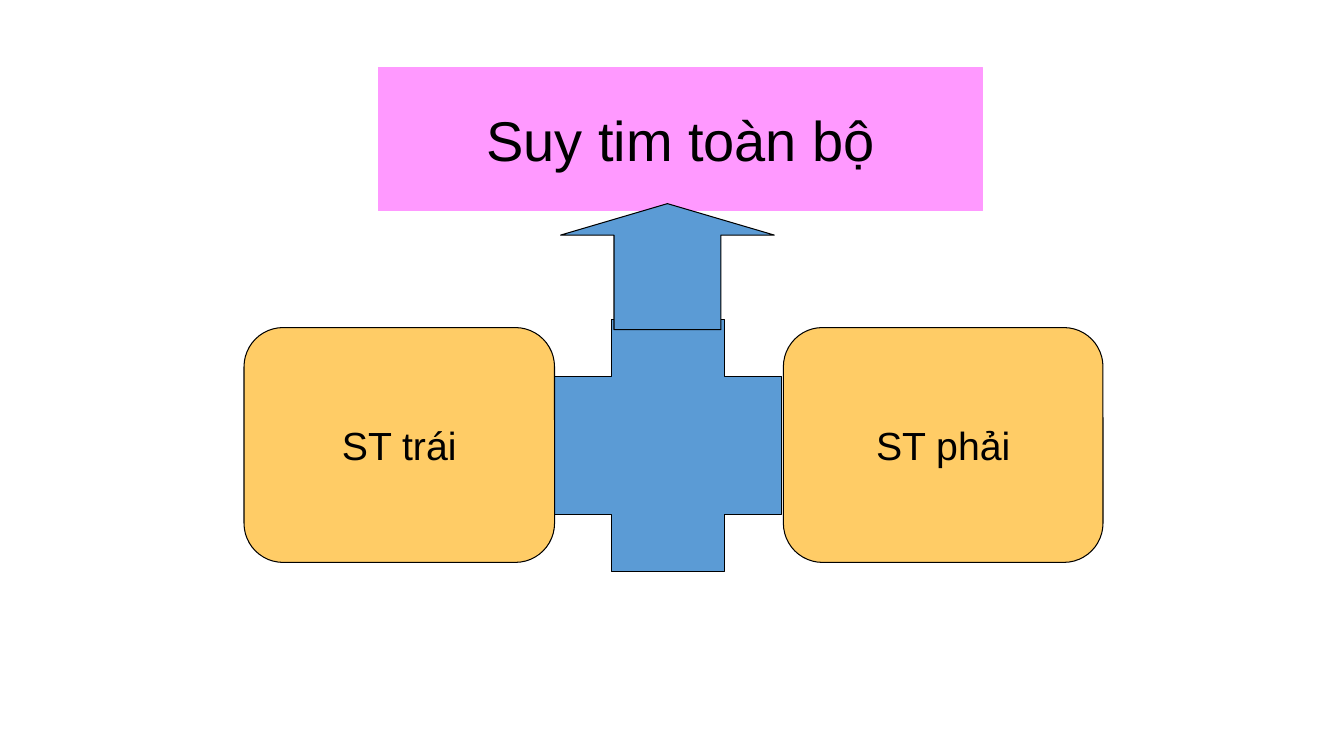
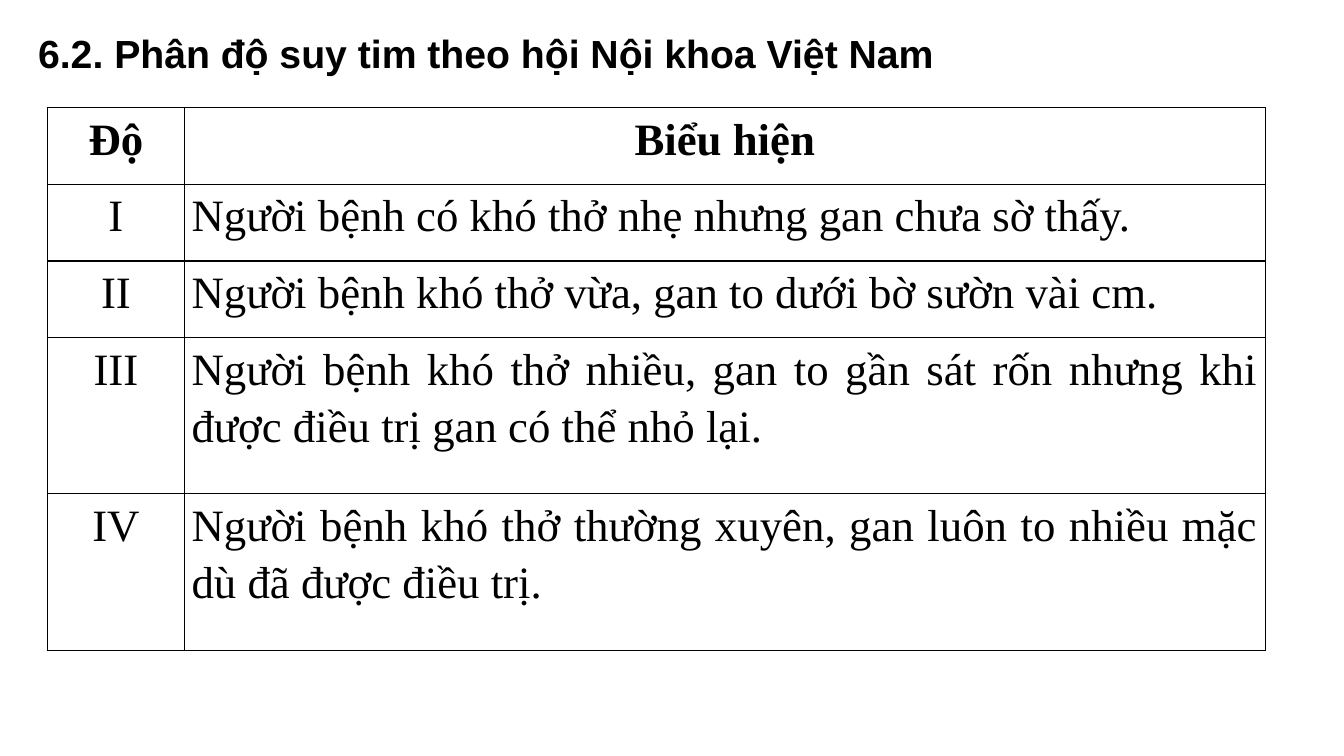
"""Build two slides on heart failure: a diagram and a table of grades."""
from lxml import etree
from pptx import Presentation
from pptx.dml.color import RGBColor
from pptx.enum.shapes import MSO_SHAPE
from pptx.enum.text import MSO_ANCHOR, PP_ALIGN
from pptx.oxml.ns import qn
from pptx.util import Inches, Pt

RECT, ROUND = MSO_SHAPE.RECTANGLE, MSO_SHAPE.ROUNDED_RECTANGLE
CROSS, ARROW = MSO_SHAPE.CROSS, MSO_SHAPE.UP_ARROW
CENTER, JUSTIFY = PP_ALIGN.CENTER, PP_ALIGN.JUSTIFY
MIDDLE = MSO_ANCHOR.MIDDLE
BLACK, WHITE, BLUE, GOLD, PINK = "000000", "FFFFFF", "5B9BD5", "FFCC66", "FF99FF"
SANS, SERIF = "Arial", "Times New Roman"


def color(code):
    """Turn a hex string into a colour."""
    return RGBColor.from_string(code)


def style(para, text, face, size, align, bold=False):
    """Write one paragraph with its font and alignment."""
    para.text = text
    para.alignment = align
    font = para.font
    font.name, font.size, font.bold = face, Pt(size), bold
    font.color.rgb = color(BLACK)


deck = Presentation()
deck.slide_width, deck.slide_height = Inches(13.33), Inches(7.5)
blank = deck.slide_layouts[6]

slide = deck.slides.add_slide(blank)
parts = [
    (CROSS, (5.5, 3.17, 2.25, 2.5), BLUE, BLACK, "", 28),
    (ROUND, (7.77, 3.25, 3.17, 2.33), GOLD, BLACK, "ST phải", 28),
    (ROUND, (2.42, 3.25, 3.08, 2.33), GOLD, BLACK, "ST trái", 28),
    (RECT, (3.75, 0.67, 6, 1.42), PINK, PINK, "Suy tim toàn bộ", 40),
    (ARROW, (5.56, 2.02, 2.12, 1.25), BLUE, BLACK, "", 28),
]
for kind, place, fill, line, text, size in parts:
    shape = slide.shapes.add_shape(kind, *map(Inches, place))
    shape.shadow.inherit = False
    shape.fill.solid()
    shape.fill.fore_color.rgb = color(fill)
    shape.line.color.rgb = color(line)
    shape.line.width = Pt(0.75)
    if kind == ARROW:
        shape.adjustments[1] = 0.25
    if text:
        frame = shape.text_frame
        frame.word_wrap = False
        frame.vertical_anchor = MIDDLE
        style(frame.paragraphs[0], text, SANS, size, CENTER)

slide = deck.slides.add_slide(blank)
title = slide.shapes.add_textbox(Inches(0.28), Inches(0.29), Inches(12.67), Inches(0.6))
title.text_frame.word_wrap = True
para = title.text_frame.paragraphs[0]
style(para, "6.2. Phân độ suy tim theo hội Nội khoa Việt Nam", SANS, 28, JUSTIFY, True)
para.line_spacing = 0.9

rows = [
    ("Độ", "Biểu hiện"),
    ("I", "Người bệnh có khó thở nhẹ nhưng gan chưa sờ thấy."),
    ("II", "Người bệnh khó thở vừa, gan to dưới bờ sườn vài cm."),
    ("III", "Người bệnh khó thở nhiều, gan to gần sát rốn nhưng khi được điều trị gan có thể nhỏ lại."),
    ("IV", "Người bệnh khó thở thường xuyên, gan luôn to nhiều mặc dù đã được điều trị."),
]
widths = [1.36, 10.72]
heights = [0.76] * 3 + [1.55] * 2
table = slide.shapes.add_table(
    len(rows), len(widths), Inches(0.47), Inches(1.07),
    Inches(sum(widths)), Inches(sum(heights))).table
table.first_row = table.horz_banding = False
for col, width in zip(table.columns, widths):
    col.width = Inches(width)
for r, (row, height) in enumerate(zip(rows, heights)):
    table.rows[r].height = Inches(height)
    for c, text in enumerate(row):
        cell = table.cell(r, c)
        cell.margin_left = cell.margin_right = Inches(0.07)
        cell.margin_top = cell.margin_bottom = 0
        para = cell.text_frame.paragraphs[0]
        head = r == 0
        style(para, text, SERIF, 32, CENTER if head or c == 0 else JUSTIFY, head)
        para.line_spacing = 1.15
        props = cell._tc.get_or_add_tcPr()
        for side in ("a:lnL", "a:lnR", "a:lnT", "a:lnB"):
            edge = etree.SubElement(props, qn(side), w=str(Pt(1)))
            paint = etree.SubElement(edge, qn("a:solidFill"))
            etree.SubElement(paint, qn("a:srgbClr"), val=BLACK)
        cell.fill.solid()
        cell.fill.fore_color.rgb = color(WHITE)

deck.save("out.pptx")
